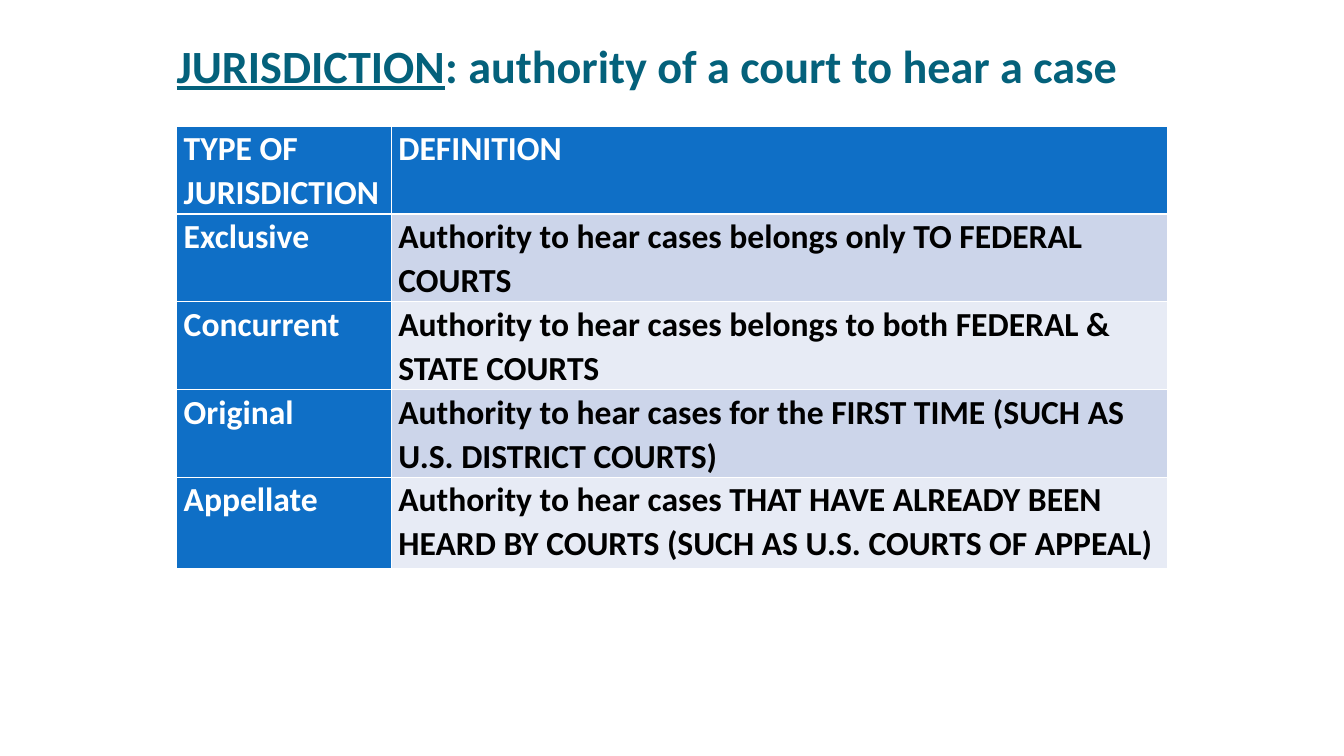
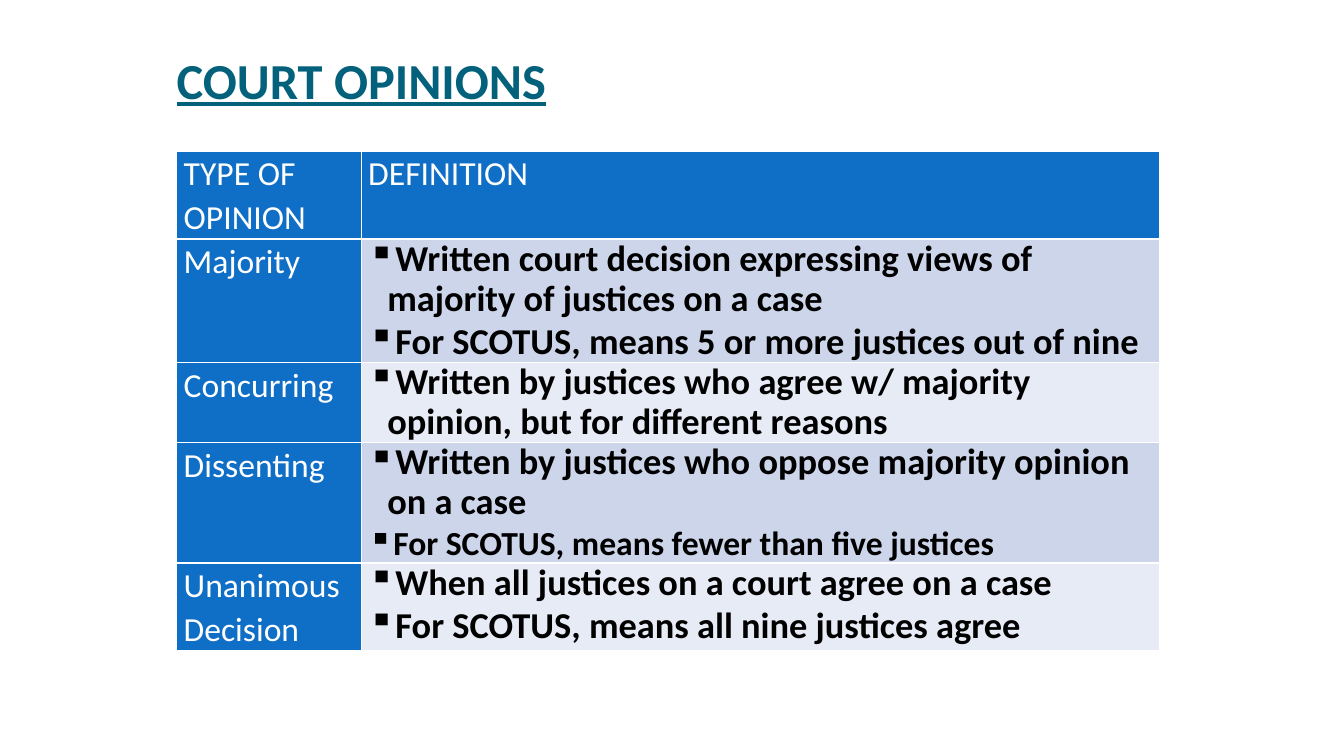
from lxml.etree import SubElement
from pptx import Presentation
from pptx.dml.color import RGBColor
from pptx.enum.text import MSO_ANCHOR as Anchor, MSO_AUTO_SIZE as AutoSize, PP_ALIGN as Align
from pptx.oxml.ns import qn
from pptx.util import Cm, Pt

FONT = "Calibri"
TEAL, BLUE, WHITE, BLACK = "04617B", "0F6FC6", "FFFFFF", "000000"
BANDS = ["CCD5EA", "E7EBF5"]
LEFT = 4.45


def rgb(value):
    return RGBColor.from_string(value)


def style(paragraph, size, color, bold):
    paragraph.alignment = Align.LEFT
    font = paragraph.font
    font.name, font.size, font.bold = FONT, Pt(size), bold
    font.color.rgb = rgb(color)


topics = [
    {
        "term": "JURISDICTION",
        "meaning": ": authority of a court to hear a case",
        "title_size": 33,
        "title_height": 1.48,
        "top": 3.18,
        "columns": [5.41, 19.56],
        "heights": [2.2, 2.2, 2.2, 2.2, 2.3],
        "label_bold": True,
        "bulleted": False,
        "rows": [
            ("TYPE OF JURISDICTION", [("DEFINITION", 24)]),
            ("Exclusive", [("Authority to hear cases belongs only TO FEDERAL COURTS", 24)]),
            ("Concurrent", [("Authority to hear cases belongs to both FEDERAL & STATE COURTS", 24)]),
            ("Original", [("Authority to hear cases for the FIRST TIME (SUCH AS U.S. DISTRICT COURTS)", 24)]),
            ("Appellate", [("Authority to hear cases THAT HAVE ALREADY BEEN HEARD BY COURTS "
                            "(SUCH AS U.S. COURTS OF APPEAL)", 24)]),
        ],
    },
    {
        "term": "COURT OPINIONS",
        "meaning": "",
        "title_size": 36,
        "title_height": 1.9,
        "top": 3.81,
        "columns": [4.65, 20.12],
        "heights": [2.2, 3.08, 1.98, 3, 2.2],
        "label_bold": False,
        "bulleted": True,
        "rows": [
            ("TYPE OF OPINION", [("DEFINITION", 24)]),
            ("Majority", [("Written court decision expressing views of majority of justices on a case", 26),
                          ("For SCOTUS, means 5 or more justices out of nine", 26)]),
            ("Concurring", [("Written by justices who agree w/ majority opinion, "
                             "but for different reasons", 26)]),
            ("Dissenting", [("Written by justices who oppose majority opinion on a case", 26),
                            ("For SCOTUS, means fewer than five justices", 24)]),
            ("Unanimous Decision", [("When all justices on a court agree on a case", 26),
                                    ("For SCOTUS, means all nine justices agree", 26)]),
        ],
    },
]

prs = Presentation()
prs.slide_width, prs.slide_height = Cm(33.87), Cm(19.05)

for topic in topics:
    slide = prs.slides.add_slide(prs.slide_layouts[5])

    title = slide.shapes.title
    title.left, title.top = Cm(LEFT), Cm(0.85)
    title.width, title.height = Cm(24.77), Cm(topic["title_height"])
    frame = title.text_frame
    frame.auto_size = AutoSize.NONE
    frame.vertical_anchor = Anchor.BOTTOM
    frame.margin_left = frame.margin_right = frame.margin_bottom = 0
    frame.margin_top = Cm(0.13)
    heading = frame.paragraphs[0]
    style(heading, topic["title_size"], TEAL, True)
    for text, underlined in [(topic["term"], True), (topic["meaning"], False)]:
        if text:
            run = heading.add_run()
            run.text = text
            run.font.underline = underlined

    rows, columns, heights = topic["rows"], topic["columns"], topic["heights"]
    table = slide.shapes.add_table(
        len(rows), len(columns), Cm(LEFT), Cm(topic["top"]), Cm(sum(columns)), Cm(sum(heights))
    ).table
    for column, width in zip(table.columns, columns):
        column.width = Cm(width)

    for r, (label, definition) in enumerate(rows):
        table.rows[r].height = Cm(heights[r])
        for c, lines in enumerate([[(label, 24)], definition]):
            is_definition = r > 0 and c == 1
            bulleted = is_definition and topic["bulleted"]
            cell = table.cell(r, c)
            cell.fill.solid()
            cell.fill.fore_color.rgb = rgb(BANDS[(r - 1) % 2] if is_definition else BLUE)
            cell.margin_left = cell.margin_right = Cm(0.18)
            cell.margin_top = cell.margin_bottom = 0
            cell.text_frame.text = "\n".join(text for text, size in lines)
            for paragraph, (text, size) in zip(cell.text_frame.paragraphs, lines):
                if bulleted:
                    props = paragraph._p.get_or_add_pPr()
                    props.set("marL", str(Cm(0.48)))
                    props.set("indent", str(-Cm(0.48)))
                    SubElement(props, qn("a:buChar"), char="▪")
                paragraph.line_spacing = 0.9 if bulleted else 1.07
                paragraph.space_before = Pt(0.8 if bulleted else 1.5)
                paragraph.space_after = Pt(1.5)
                style(paragraph, size, BLACK if is_definition else WHITE,
                      is_definition or topic["label_bold"])

prs.save("out.pptx")
